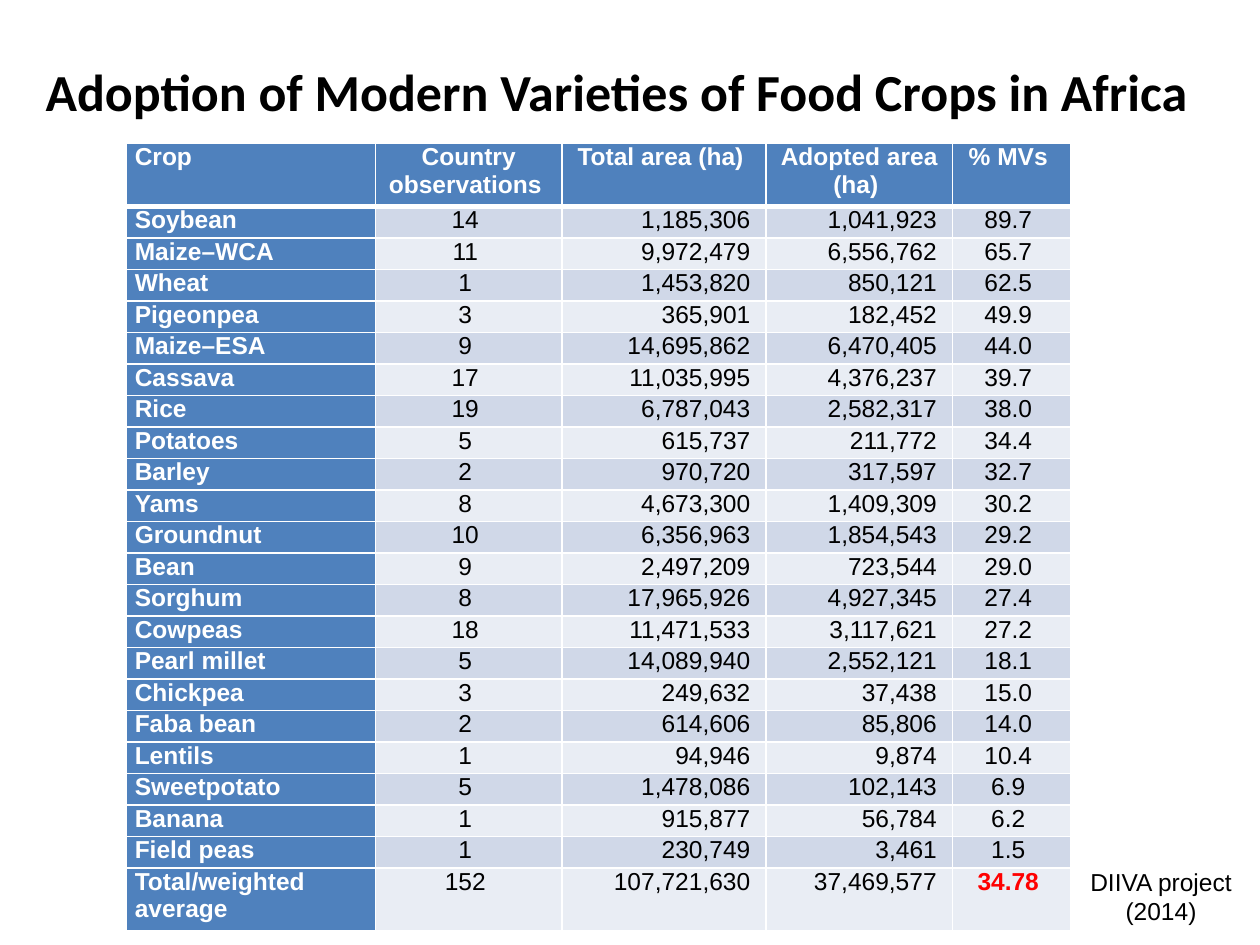
"""Build a slide with a table of modern crop variety adoption in Africa."""
from typing import NamedTuple

from lxml.etree import SubElement
from pptx import Presentation
from pptx.dml.color import RGBColor
from pptx.enum.text import MSO_ANCHOR, MSO_AUTO_SIZE, PP_ALIGN
from pptx.oxml.ns import qn
from pptx.util import Inches, Pt

COLORS = {
    "header": "4F81BD",
    "odd": "D0D8E8",
    "even": "E9EDF4",
    "white": "FFFFFF",
    "black": "000000",
    "highlight": "FF0000",
}
TITLE_FORMAT = {"name": "Calibri", "size": Pt(29.7), "bold": True}
LABEL_FORMAT = {"name": "Arial", "size": Pt(14), "bold": True}
VALUE_FORMAT = {"name": "Arial", "size": Pt(14), "bold": False}
CELL_MARGINS = {
    "margin_left": Inches(0.07),
    "margin_right": Inches(0.07),
    "margin_top": 0,
    "margin_bottom": 0,
}


class Column(NamedTuple):
    heading: str
    width: float
    alignment: PP_ALIGN
    heading_alignment: PP_ALIGN = PP_ALIGN.CENTER


class Crop(NamedTuple):
    name: str
    observations: int
    total_area: int
    adopted_area: int
    share: str

    def texts(self) -> list[str]:
        areas = [f"{area:,} " for area in (self.total_area, self.adopted_area)]
        return [self.name, f"{self.observations} ", *areas, f"{self.share} "]


COLUMNS = [
    Column("Crop", 1.98, PP_ALIGN.LEFT, PP_ALIGN.LEFT),
    Column("Country observations ", 1.48, PP_ALIGN.CENTER),
    Column("Total area (ha) ", 1.62, PP_ALIGN.RIGHT),
    Column("Adopted area (ha) ", 1.48, PP_ALIGN.RIGHT),
    Column("% MVs ", 0.94, PP_ALIGN.CENTER),
]
CROPS = [
    Crop("Soybean", 14, 1185306, 1041923, "89.7"),
    Crop("Maize–WCA", 11, 9972479, 6556762, "65.7"),
    Crop("Wheat", 1, 1453820, 850121, "62.5"),
    Crop("Pigeonpea", 3, 365901, 182452, "49.9"),
    Crop("Maize–ESA", 9, 14695862, 6470405, "44.0"),
    Crop("Cassava", 17, 11035995, 4376237, "39.7"),
    Crop("Rice", 19, 6787043, 2582317, "38.0"),
    Crop("Potatoes", 5, 615737, 211772, "34.4"),
    Crop("Barley", 2, 970720, 317597, "32.7"),
    Crop("Yams", 8, 4673300, 1409309, "30.2"),
    Crop("Groundnut", 10, 6356963, 1854543, "29.2"),
    Crop("Bean", 9, 2497209, 723544, "29.0"),
    Crop("Sorghum", 8, 17965926, 4927345, "27.4"),
    Crop("Cowpeas", 18, 11471533, 3117621, "27.2"),
    Crop("Pearl millet", 5, 14089940, 2552121, "18.1"),
    Crop("Chickpea", 3, 249632, 37438, "15.0"),
    Crop("Faba bean", 2, 614606, 85806, "14.0"),
    Crop("Lentils", 1, 94946, 9874, "10.4"),
    Crop("Sweetpotato", 5, 1478086, 102143, "6.9"),
    Crop("Banana", 1, 915877, 56784, "6.2"),
    Crop("Field peas", 1, 230749, 3461, "1.5"),
    Crop("Total/weighted average", 152, 107721630, 37469577, "34.78"),
]


def set_attributes(target, values: dict) -> None:
    for name, value in values.items():
        setattr(target, name, value)


def write_text(text_frame, text: str, font_format: dict, color: str,
               alignment: PP_ALIGN = PP_ALIGN.CENTER) -> None:
    paragraph = text_frame.paragraphs[0]
    paragraph.alignment = alignment
    run = paragraph.add_run()
    run.text = text
    set_attributes(run.font, font_format)
    run.font.color.rgb = RGBColor.from_string(COLORS[color])


def add_borders(cell, top: int, bottom: int) -> None:
    properties = cell._tc.get_or_add_tcPr()
    for side, points in {"L": 1, "R": 1, "T": top, "B": bottom}.items():
        line = SubElement(properties, qn(f"a:ln{side}"), w=str(Pt(points)))
        fill = SubElement(line, qn("a:solidFill"))
        SubElement(fill, qn("a:srgbClr"), val=COLORS["white"])


def fill_cell(cell, text: str, row: int, column: int) -> None:
    is_header = row == 0
    is_label = is_header or column == 0
    is_average = row == len(CROPS) and column == len(COLUMNS) - 1
    background = "header" if is_label else "odd" if row % 2 else "even"
    color = "white" if is_label else "highlight" if is_average else "black"
    font_format = LABEL_FORMAT if is_label or is_average else VALUE_FORMAT
    layout = COLUMNS[column]
    alignment = layout.heading_alignment if is_header else layout.alignment
    set_attributes(cell, CELL_MARGINS)
    add_borders(cell, top=3 if row == 1 else 1, bottom=3 if is_header else 1)
    cell.fill.solid()
    cell.fill.fore_color.rgb = RGBColor.from_string(COLORS[background])
    write_text(cell.text_frame, text, font_format, color, alignment)


def add_crop_table(slide) -> None:
    rows = [[column.heading for column in COLUMNS], *(crop.texts() for crop in CROPS)]
    heights = [0.5, *[0.25] * (len(CROPS) - 1), 0.5]
    table = slide.shapes.add_table(
        len(rows), len(COLUMNS), Inches(1), Inches(1.14),
        Inches(sum(column.width for column in COLUMNS)), Inches(sum(heights)),
    ).table
    for table_column, column in zip(table.columns, COLUMNS):
        table_column.width = Inches(column.width)
    for row, (texts, height) in enumerate(zip(rows, heights)):
        table.rows[row].height = Inches(height)
        for column, text in enumerate(texts):
            fill_cell(table.cell(row, column), text, row, column)


def add_title(slide) -> None:
    title = slide.shapes.title
    set_attributes(title, {"left": 0, "top": Inches(0.3),
                           "width": Inches(10), "height": Inches(0.84)})
    set_attributes(title.text_frame, {
        "margin_right": Inches(0.3), "word_wrap": True,
        "auto_size": MSO_AUTO_SIZE.NONE, "vertical_anchor": MSO_ANCHOR.MIDDLE,
    })
    write_text(title.text_frame, "Adoption of Modern Varieties of Food Crops in Africa",
               TITLE_FORMAT, "black")


def add_source_note(slide) -> None:
    note = slide.shapes.add_textbox(Inches(8.43), Inches(6.85), Inches(1.57), Inches(0.53))
    set_attributes(note.text_frame, {"word_wrap": True, "vertical_anchor": MSO_ANCHOR.MIDDLE})
    write_text(note.text_frame, "DIIVA project (2014)", VALUE_FORMAT, "black")


def main() -> None:
    presentation = Presentation()
    presentation.slide_width = Inches(10)
    presentation.slide_height = Inches(7.5)
    slide = presentation.slides.add_slide(presentation.slide_layouts.get_by_name("Title Only"))
    add_title(slide)
    add_crop_table(slide)
    add_source_note(slide)
    presentation.save("out.pptx")


if __name__ == "__main__":
    main()
